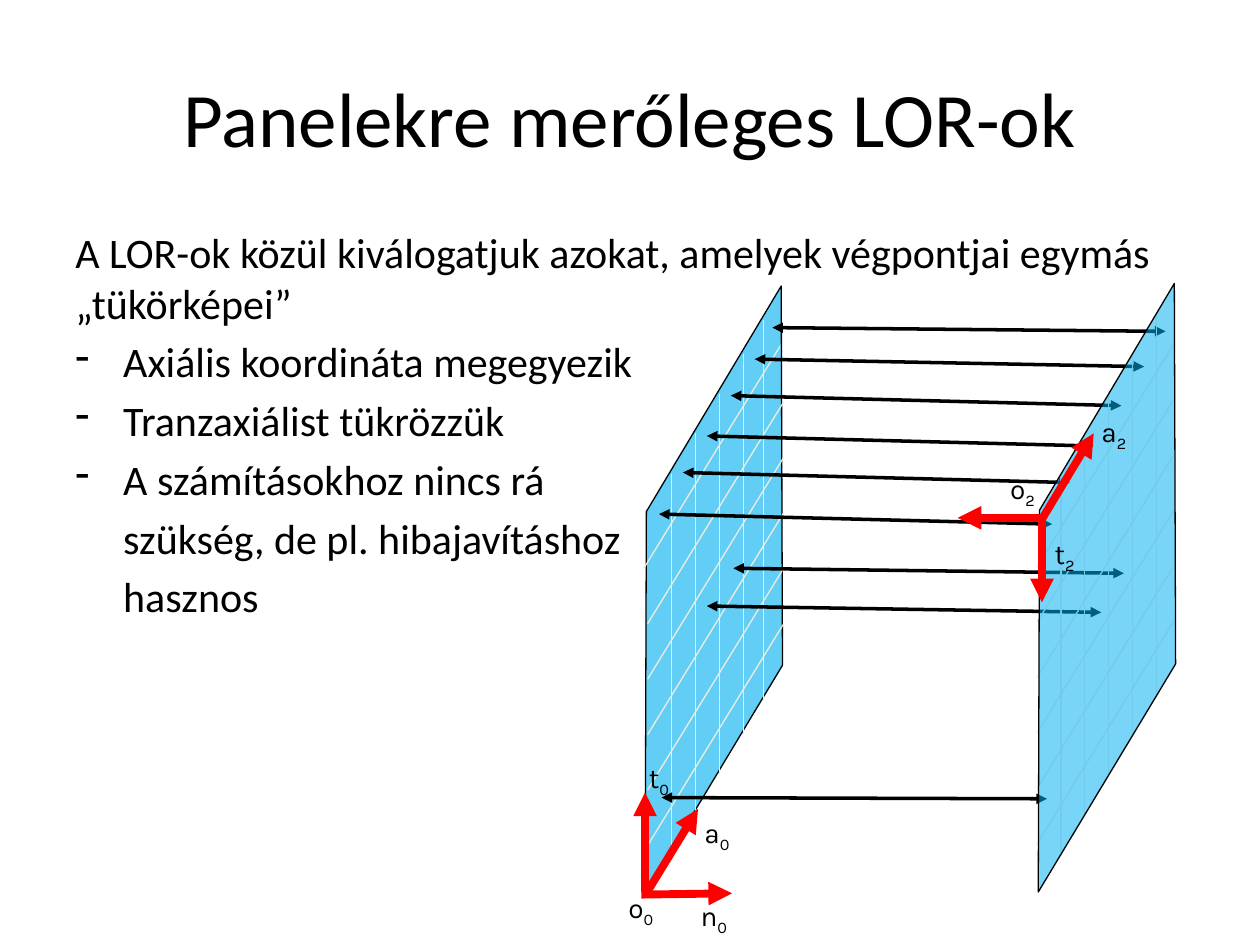
from lxml import etree
from pptx import Presentation, util as u
from pptx.dml.color import RGBColor
from pptx.enum import text
from pptx.oxml.ns import qn

UNIT = 9144
BLACK, RED, CREAM, BLUE = "000000", "FF0000", "EEECE1", "00B0F0"
TITLE = "Panelekre merőleges LOR-ok"
INTRO = "A LOR-ok közül kiválogatjuk azokat, amelyek végpontjai egymás „tükörképei”"
POINTS = [
    ("Axiális koordináta megegyezik", True),
    ("Tranzaxiálist tükrözzük", True),
    ("A számításokhoz nincs rá", True),
    ("szükség, de pl. hibajavításhoz", False),
    ("hasznos", False),
]
LORS = [
    (868, 354, 561, 346), (890, 322, 580, 314), (908, 291, 599, 285),
    (925, 263, 613, 260), (874, 486, 561, 481), (892, 455, 582, 451),
    (831, 634, 525, 633), (849, 383, 542, 375), (835, 416, 523, 408),
]
AXES_0 = [(512, 708, 512, 629), (513, 709, 554, 642), (509, 710, 581, 709)]
AXES_2 = [(827, 412, 868, 344), (827, 412, 827, 478), (827, 411, 760, 411)]
LABELS_0 = [("n", 542, 708, 49), ("a", 548, 642, 42), ("t", 505, 599, 36), ("o", 487, 702, 43)]
LABELS_2 = [("a", 863, 324, 42), ("o", 790, 369, 43), ("t", 827, 421, 36)]


def px(n):
    return u.Emu(n * UNIT)


def color(code):
    return RGBColor.from_string(code)


def add_run(para, words, size, face="Calibri"):
    run = para.add_run()
    run.text = words
    run.font.size = u.Pt(size)
    run.font.name = face
    run.font.color.rgb = color(BLACK)
    return run


def add_box(slide, x, y, w, h, wrap=True):
    frame = slide.shapes.add_textbox(px(x), px(y), px(w), px(h)).text_frame
    frame.word_wrap = wrap
    return frame


def add_title(slide):
    frame = add_box(slide, 50, 30, 900, 125)
    frame.vertical_anchor = text.MSO_ANCHOR.MIDDLE
    para = frame.paragraphs[0]
    para.alignment = text.PP_ALIGN.CENTER
    add_run(para, TITLE, 44)


def indent(para, dash):
    props = para._p.get_or_add_pPr()
    props.set("marL", str(px(38)))
    props.set("indent", str(px(-38 if dash else 0)))
    if dash:
        etree.SubElement(props, qn("a:buChar")).set("char", "-")


def add_body(slide):
    frame = add_box(slide, 50, 175, 900, 554)
    para = frame.paragraphs[0]
    para.space_before = u.Pt(4.8)
    add_run(para, INTRO, 24)
    for words, dash in POINTS:
        para = frame.add_paragraph()
        para.space_before = u.Pt(4.8)
        indent(para, dash)
        add_run(para, words, 24)


def add_line(slide, ends, code, width, heads=()):
    line = slide.shapes.add_connector(1, *map(px, ends))
    line.line.color.rgb = color(code)
    line.line.width = u.Pt(width)
    edge = line.element.spPr.find(qn("a:ln"))
    for head in heads:
        etree.SubElement(edge, qn(f"a:{head}")).set("type", "triangle")
    etree.SubElement(line.element.spPr, qn("a:effectLst"))


def add_panel(slide, points, alpha):
    start, *rest = points
    build = slide.shapes.build_freeform(*start, scale=UNIT)
    build.add_line_segments(rest, close=True)
    panel = build.convert_to_shape()
    panel.shadow.inherit = False
    panel.fill.solid()
    panel.fill.fore_color.rgb = color(BLUE)
    tint = panel.element.spPr.find(qn("a:solidFill")).find(qn("a:srgbClr"))
    etree.SubElement(tint, qn("a:alpha")).set("val", str(alpha * 1000))
    panel.line.color.rgb = color(BLACK)
    panel.line.width = u.Pt(0.75)


def add_grid(slide, cols, top, rights, first):
    for x in cols:
        y = top - round(1.67 * (x - cols[0]))
        add_line(slide, (x, y, x, y + 302), CREAM, 0.75)
    for i, x in enumerate(rights):
        y = first + 44 * i
        add_line(slide, (x, y, x - 108, y + 176), CREAM, 0.75)


def add_axes(slide, axes):
    for ends in axes:
        add_line(slide, ends, RED, 4.5, ["tailEnd"])


def add_labels(slide, labels, index):
    for name, x, y, w in labels:
        frame = add_box(slide, x, y, w, 29, False)
        frame.auto_size = text.MSO_AUTO_SIZE.SHAPE_TO_FIT_TEXT
        para = frame.paragraphs[0]
        para.alignment = text.PP_ALIGN.CENTER
        add_run(para, name, 16, "Karla")
        sub = add_run(para, index, 16, "Karla")
        sub.font._element.set("baseline", "-25000")


def main():
    deck = Presentation()
    deck.slide_width, deck.slide_height = px(1000), px(750)
    slide = deck.slides.add_slide(deck.slide_layouts[6])
    add_title(slide)
    add_body(slide)
    add_panel(slide, [(513, 406), (512, 709), (621, 528), (620, 227)], 61)
    add_grid(slide, [533, 552, 571, 590, 606], 376, [619] + [622] * 5, 275)
    for ends in LORS:
        add_line(slide, ends, BLACK, 2, ["headEnd", "tailEnd"])
    add_grid(slide, range(842, 919, 19), 375, [931] * 6, 274)
    add_panel(slide, [(825, 405), (824, 708), (933, 527), (932, 225)], 53)
    add_axes(slide, AXES_0)
    add_labels(slide, LABELS_0, "0")
    add_axes(slide, AXES_2)
    add_labels(slide, LABELS_2, "2")
    deck.save("out.pptx")


if __name__ == "__main__":
    main()
